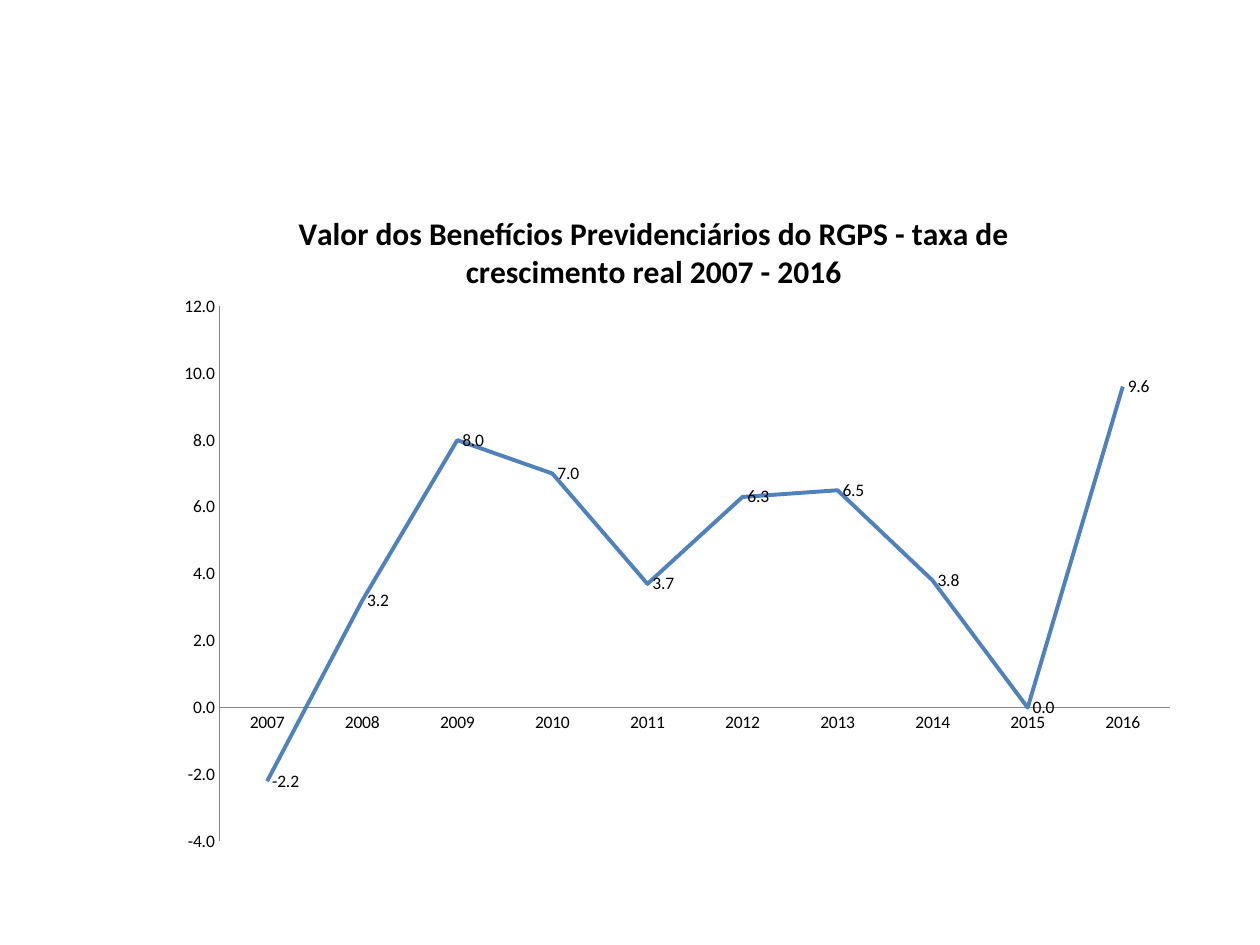
from lxml.etree import SubElement
from pptx import Presentation
from pptx.chart.data import CategoryChartData
from pptx.dml.color import RGBColor
from pptx.enum.chart import XL_CHART_TYPE as ChartType
from pptx.enum.chart import XL_LABEL_POSITION as LabelPos
from pptx.enum.chart import XL_TICK_MARK as Tick
from pptx.oxml.ns import qn
from pptx.util import Pt

PX = 914400 // 126
BLACK = RGBColor(0x00, 0x00, 0x00)
BLUE = RGBColor(0x4F, 0x81, 0xBD)
GRAY = RGBColor(0x86, 0x86, 0x86)

TITLE = ("Valor dos Benefícios Previdenciários do RGPS - taxa de "
         "crescimento real 2007 - 2016")
YEARS = [str(year) for year in range(2007, 2017)]
GROWTH = [-2.2, 3.2, 8.0, 7.0, 3.7, 6.3, 6.5, 3.8, 0.0, 9.6]


def set_font(font, size, bold=False):
    """Apply the chart typeface at the given size."""
    font.name, font.size, font.bold = "Calibri", Pt(size), bold
    font.color.rgb = BLACK


def set_plot_box(chart, x, y, w, h):
    """Fix the inner plot area as fractions of the chart."""
    area = chart._chartSpace.chart.plotArea
    for old in area.findall(qn("c:layout")):
        area.remove(old)
    layout = SubElement(area, qn("c:layout"))
    area.insert(0, layout)
    manual = SubElement(layout, qn("c:manualLayout"))
    settings = [("layoutTarget", "inner"), ("xMode", "edge"), ("yMode", "edge"),
                ("x", x), ("y", y), ("w", w), ("h", h)]
    for tag, val in settings:
        SubElement(manual, qn(f"c:{tag}")).set("val", str(val))


def format_axes(chart):
    """Style both axes and scale the value axis."""
    for axis in (chart.category_axis, chart.value_axis):
        axis.major_tick_mark = axis.minor_tick_mark = Tick.NONE
        axis.has_major_gridlines = False
        axis.format.line.color.rgb = GRAY
        axis.format.line.width = Pt(0.75)
    value = chart.value_axis
    value.minimum_scale, value.maximum_scale, value.major_unit = -4, 12, 2
    value.tick_labels.number_format = "0.0"
    value.tick_labels.number_format_is_linked = False


def format_series(plot):
    """Style the growth line and its value labels."""
    series = plot.series[0]
    series.smooth = False
    series.format.line.color.rgb = BLUE
    series.format.line.width = Pt(2.25)
    labels = series.data_labels
    labels.show_value = True
    labels.number_format = "0.0"
    labels.number_format_is_linked = False
    labels.position = LabelPos.RIGHT
    set_font(labels.font, 10)


def add_growth_chart(s, x, y, w, h):
    """Add the line chart of real benefit growth in the given box."""
    data = CategoryChartData(number_format="0.0")
    data.categories = YEARS
    data.add_series("Series 1", GROWTH)
    frame = s.shapes.add_chart(ChartType.LINE_STACKED, x * PX, y * PX,
                               w * PX, h * PX, data)
    chart = frame.chart
    chart.has_legend = False
    set_font(chart.font, 10)
    tf = chart.chart_title.text_frame
    tf.text = TITLE
    set_font(tf.paragraphs[0].font, 18, bold=True)
    chart.chart_title.include_in_layout = False
    chart.plots[0].vary_by_categories = False
    format_axes(chart)
    format_series(chart.plots[0])
    set_plot_box(chart, 0.08, 0.18, 0.92, 0.8)


def main():
    """Build the slide and save it."""
    prs = Presentation()
    prs.slide_width, prs.slide_height = 1260 * PX, 945 * PX
    s = prs.slides.add_slide(prs.slide_layouts[6])
    add_growth_chart(s, 137, 186, 1034, 669)
    prs.save("out.pptx")


if __name__ == "__main__":
    main()
